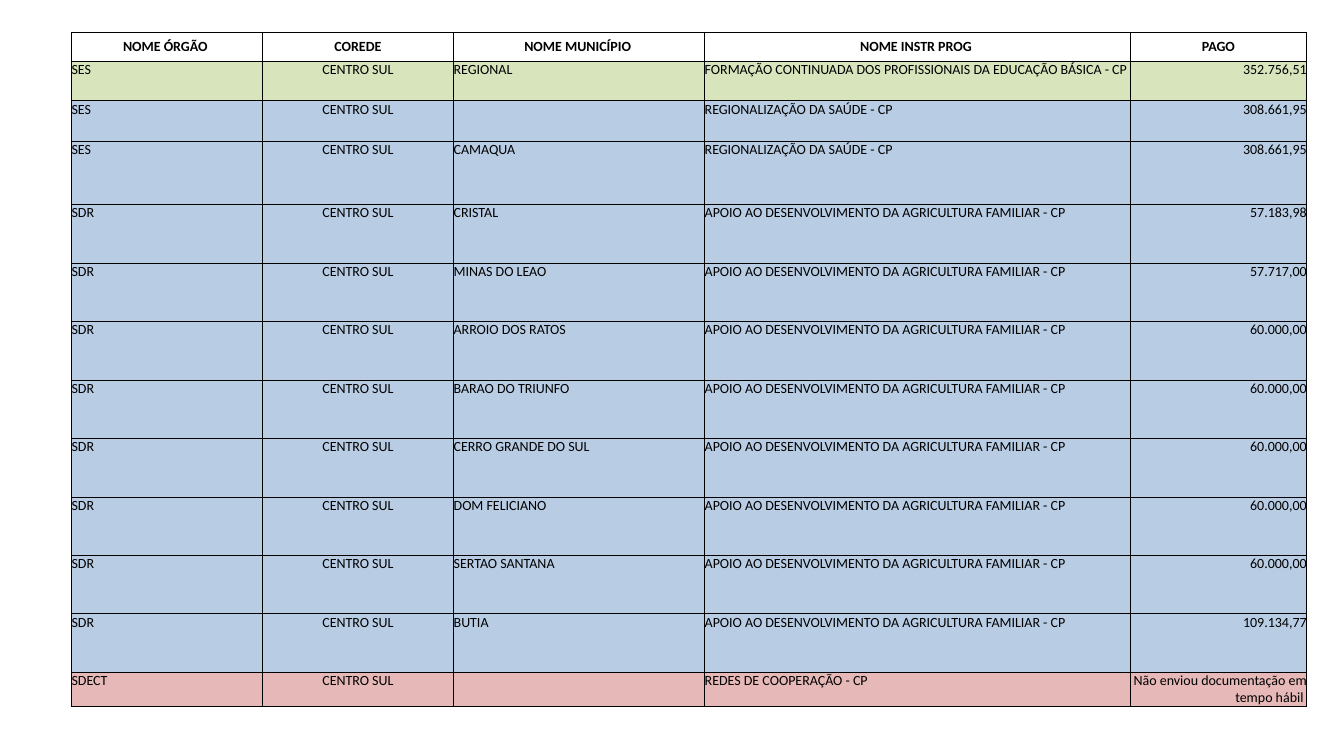
import pptx
import pptx.util
import pptx.dml.color
import pptx.enum.text
import lxml.etree

Inches = pptx.util.Inches
Pt = pptx.util.Pt
RGB = pptx.dml.color.RGBColor.from_string
Align = pptx.enum.text.PP_ALIGN
Anchor = pptx.enum.text.MSO_ANCHOR

COLORS = {
    "ink": "000000",
    "head": "FFFFFF",
    "green": "D7E4BC",
    "blue": "B8CCE4",
    "red": "E6B9B8",
}
BOX = (0.71, 0.32, 12.25, 6.66)
WIDTHS = [1.89, 1.9, 2.49, 4.22, 1.75]
HEIGHTS = [0.29, 0.39, 0.4, 0.63] + [0.58] * 8 + [0.31]
ALIGNS = [Align.LEFT, Align.CENTER, Align.LEFT, Align.LEFT, Align.RIGHT]

HEAD = ["NOME ÓRGÃO ", "COREDE", "NOME MUNICÍPIO ", "NOME INSTR PROG ", "PAGO"]
REGION = "CENTRO SUL"
HEALTH = "REGIONALIZAÇÃO DA SAÚDE - CP"
FARM = "APOIO AO DESENVOLVIMENTO DA AGRICULTURA FAMILIAR - CP"
TRAINING = "FORMAÇÃO CONTINUADA DOS PROFISSIONAIS DA EDUCAÇÃO BÁSICA - CP"
FARM_PAID = [
    ("CRISTAL", "57.183,98"),
    ("MINAS DO LEAO", "57.717,00"),
    ("ARROIO DOS RATOS", "60.000,00"),
    ("BARAO DO TRIUNFO", "60.000,00"),
    ("CERRO GRANDE DO SUL", "60.000,00"),
    ("DOM FELICIANO", "60.000,00"),
    ("SERTAO SANTANA", "60.000,00"),
    ("BUTIA", "109.134,77"),
]
ROWS = [
    ("green", ["SES", REGION, "REGIONAL", TRAINING, "352.756,51"]),
    ("blue", ["SES", REGION, "", HEALTH, "308.661,95"]),
    ("blue", ["SES", REGION, "CAMAQUA", HEALTH, "308.661,95"]),
    *[("blue", ["SDR", REGION, town, FARM, paid]) for town, paid in FARM_PAID],
    ("red", ["SDECT", REGION, "", "REDES DE COOPERAÇÃO - CP",
             "Não enviou documentação em tempo hábil "]),
]


def add_borders(cell):
    props = cell._tc.get_or_add_tcPr()
    space = "{http://schemas.openxmlformats.org/drawingml/2006/main}"
    for side in ("lnL", "lnR", "lnT", "lnB"):
        line = lxml.etree.SubElement(props, space + side, w=str(Pt(0.5)))
        fill = lxml.etree.SubElement(line, space + "solidFill")
        lxml.etree.SubElement(fill, space + "srgbClr", val=COLORS["ink"])


def fill_cell(cell, text, color, align, anchor=Anchor.TOP, bold=False):
    add_borders(cell)
    cell.fill.solid()
    cell.fill.fore_color.rgb = RGB(COLORS[color])
    layout = {"margin_left": 0, "margin_right": 0, "margin_top": 0,
              "margin_bottom": 0, "vertical_anchor": anchor}
    for name, value in layout.items():
        setattr(cell, name, value)
    para = cell.text_frame.paragraphs[0]
    para.alignment = align
    if text:
        run = para.add_run()
        run.text = text
        style = {"name": "Calibri", "size": Pt(10), "bold": bold}
        for name, value in style.items():
            setattr(run.font, name, value)
        run.font.color.rgb = RGB(COLORS["ink"])


def add_payments(slide, box):
    frame = slide.shapes.add_table(len(HEIGHTS), len(WIDTHS), *map(Inches, box))
    table = frame.table
    table.horz_banding = False
    for column, width in zip(table.columns, WIDTHS):
        column.width = Inches(width)
    for row, height in zip(table.rows, HEIGHTS):
        row.height = Inches(height)
    for col, text in enumerate(HEAD):
        fill_cell(table.cell(0, col), text, "head", Align.CENTER, Anchor.MIDDLE, True)
    for row, (color, texts) in enumerate(ROWS, 1):
        for col, (text, align) in enumerate(zip(texts, ALIGNS)):
            fill_cell(table.cell(row, col), text, color, align)


def main():
    deck = pptx.Presentation()
    deck.slide_width = Inches(13.33)
    deck.slide_height = Inches(7.5)
    slide = deck.slides.add_slide(deck.slide_layouts[6])
    add_payments(slide, BOX)
    deck.save("out.pptx")


if __name__ == "__main__":
    main()
